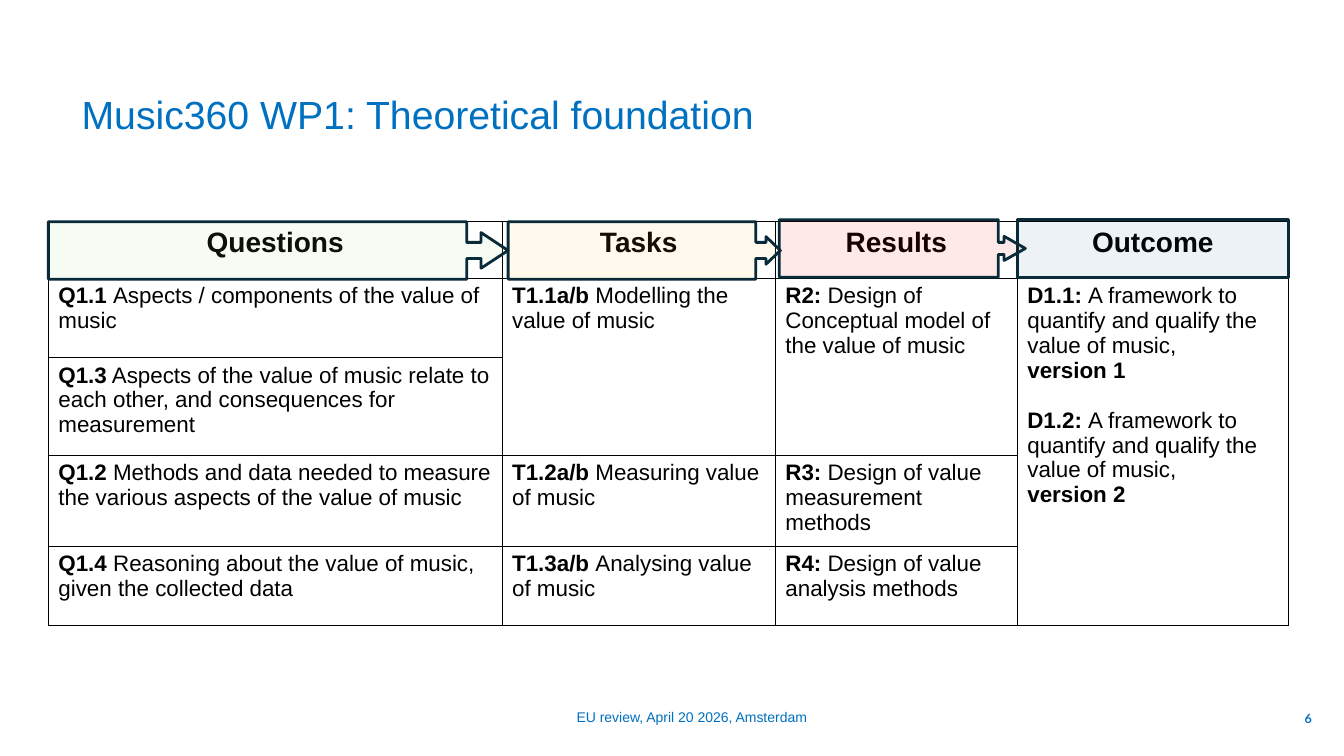
from itertools import product

from lxml import etree
from pptx import Presentation
from pptx.dml.color import RGBColor
from pptx.enum.shapes import MSO_SHAPE
from pptx.enum.text import MSO_ANCHOR, MSO_AUTO_SIZE, PP_ALIGN
from pptx.oxml import parse_xml
from pptx.oxml.ns import nsdecls, qn
from pptx.util import Inches, Pt

CALLOUT, RECTANGLE = MSO_SHAPE.RIGHT_ARROW_CALLOUT, MSO_SHAPE.RECTANGLE
LEFT, CENTER, RIGHT = PP_ALIGN.LEFT, PP_ALIGN.CENTER, PP_ALIGN.RIGHT
MIDDLE = MSO_ANCHOR.MIDDLE
NO_AUTOFIT = MSO_AUTO_SIZE.NONE

THEME = {
    "accent": "0070C0", "text": "000000", "outline": "092A39",
    "questions": "8ED973", "tasks": "FFC000", "results": "FF0000", "outcome": "156082",
    "title": 28, "header": 20, "body": 16, "footer": 10, "number": 9,
    "font": "Arial", "number_font": "Lato",
}


def write(paragraph, text, size="body", color="text", font="font", bold=False, align=LEFT):
    paragraph.alignment = align
    for index, line in enumerate(text.split("\n")):
        if index:
            paragraph.add_line_break()
        if line:
            run = paragraph.add_run()
            run.text = line
            run.font.size = Pt(THEME[size])
            run.font.name = THEME[font]
            run.font.bold = bold
            run.font.color.rgb = RGBColor.from_string(THEME[color])


deck = Presentation()
deck.slide_width, deck.slide_height = Inches(13.33), Inches(7.5)
slide = deck.slides.add_slide(deck.slide_layouts[5])

title = slide.shapes.title
title.left, title.top, title.width, title.height = map(Inches, (0.71, 0.4, 11.7, 1.45))
title.text_frame.auto_size = NO_AUTOFIT
title.text_frame.vertical_anchor = MIDDLE
write(title.text_frame.paragraphs[0], "Music360 WP1: Theoretical foundation",
      size="title", color="accent")

for text, left, top, width, style in (
    ("EU review, April 20 2026, Amsterdam", 3.58, 6.91, 4.52, {"size": "footer"}),
    ("6", 12.52, 6.93, 0.59, {"size": "number", "font": "number_font", "bold": True}),
):
    footer = slide.shapes.add_textbox(*map(Inches, (left, top, width, 0.4))).text_frame
    footer.word_wrap = True
    footer.vertical_anchor = MIDDLE
    write(footer.paragraphs[0], text, color="accent", align=RIGHT, **style)

COLUMNS = [4.5, 2.71, 2.4, 2.69]
ROWS = [0.56, 0.79, 0.97, 0.85, 0.79]
GRID_LEFT, GRID_TOP = 0.48, 2.2
HEADERS = ["Questions", "Tasks", "Results", "Outcome"]
FRAMEWORK = "A framework to quantify and qualify the value of music, \n"
CONTENT = {
    (1, 0): [[("Q1.1 ", True), ("Aspects / components of the value of music", False)]],
    (2, 0): [[("Q1.3", True), (" Aspects of the value of music relate to each other, "
                               "and consequences for measurement", False)]],
    (3, 0): [[("Q1.2", True), (" Methods and data needed to measure the various aspects "
                               "of the value of music", False)]],
    (4, 0): [[("Q1.4", True), (" Reasoning about the value of music, given the collected data", False)]],
    (1, 1): [[("T1.1a/b ", True), ("Modelling the value of music", False)]],
    (3, 1): [[("T1.2a/b ", True), ("Measuring value of music", False)]],
    (4, 1): [[("T1.3a/b ", True), ("Analysing value of music", False)]],
    (1, 2): [[("R2: ", True), ("Design of Conceptual model of the value of music", False)]],
    (3, 2): [[("R3: ", True), ("Design of value measurement methods", False)]],
    (4, 2): [[("R4: ", True), ("Design of value analysis methods", False)]],
    (1, 3): [[(f"D1.{version}: ", True), (FRAMEWORK, False), (f"version {version}", True)]
             for version in (1, 2)],
}

table = slide.shapes.add_table(
    len(ROWS), len(COLUMNS),
    *map(Inches, (GRID_LEFT, GRID_TOP, sum(COLUMNS), sum(ROWS)))).table
table.first_row = table.horz_banding = False
for column, width in zip(table.columns, COLUMNS):
    column.width = Inches(width)
for row, height in zip(table.rows, ROWS):
    row.height = Inches(height)

for row, column in product(range(len(ROWS)), range(len(COLUMNS))):
    cell = table.cell(row, column)
    properties = cell._tc.get_or_add_tcPr()
    for side in ("lnL", "lnR", "lnT", "lnB"):
        properties.append(parse_xml(
            f'<a:{side} {nsdecls("a")} w="{Pt(1)}"><a:solidFill>'
            f'<a:srgbClr val="{THEME["text"]}"/></a:solidFill></a:{side}>'))
    cell.fill.background()

for last_row, column in ((2, 1), (2, 2), (4, 3)):
    table.cell(1, column).merge(table.cell(last_row, column))

for column, header in enumerate(HEADERS):
    write(table.cell(0, column).text_frame.paragraphs[0], header,
          size="header", bold=True, align=CENTER)

for position, paragraphs in CONTENT.items():
    frame = table.cell(*position).text_frame
    for index, parts in enumerate(paragraphs):
        paragraph = frame.add_paragraph() if index else frame.paragraphs[0]
        if index:
            paragraph.space_before = Pt(18)
        for text, bold in parts:
            write(paragraph, text, bold=bold)

for preset, left, top, width, color, opacity, adjustments in (
    (CALLOUT, GRID_LEFT, GRID_TOP, 4.56, "questions", 8, (0.28, 0.31, 0.47, 0.91)),
    (CALLOUT, 5.04, GRID_TOP, 2.7, "tasks", 8, (0.28, 0.24, 0.25, 0.91)),
    (CALLOUT, 7.73, GRID_TOP - 0.02, 2.44, "results", 9, (0.21, 0.21, 0.37, 0.89)),
    (RECTANGLE, 10.09, GRID_TOP - 0.02, 2.69, "outcome", 8, ()),
):
    stage = slide.shapes.add_shape(preset, *map(Inches, (left, top, width, 0.57)))
    stage.shadow.inherit = False
    for index, value in enumerate(adjustments):
        stage.adjustments[index] = value
    stage.fill.solid()
    stage.fill.fore_color.rgb = RGBColor.from_string(THEME[color])
    tint = stage._element.spPr.find(qn("a:solidFill")).find(qn("a:srgbClr"))
    etree.SubElement(tint, qn("a:alpha")).set("val", str(opacity * 1000))
    stage.line.color.rgb = RGBColor.from_string(THEME["outline"])
    stage.line.width = Pt(2)

deck.save("out.pptx")
